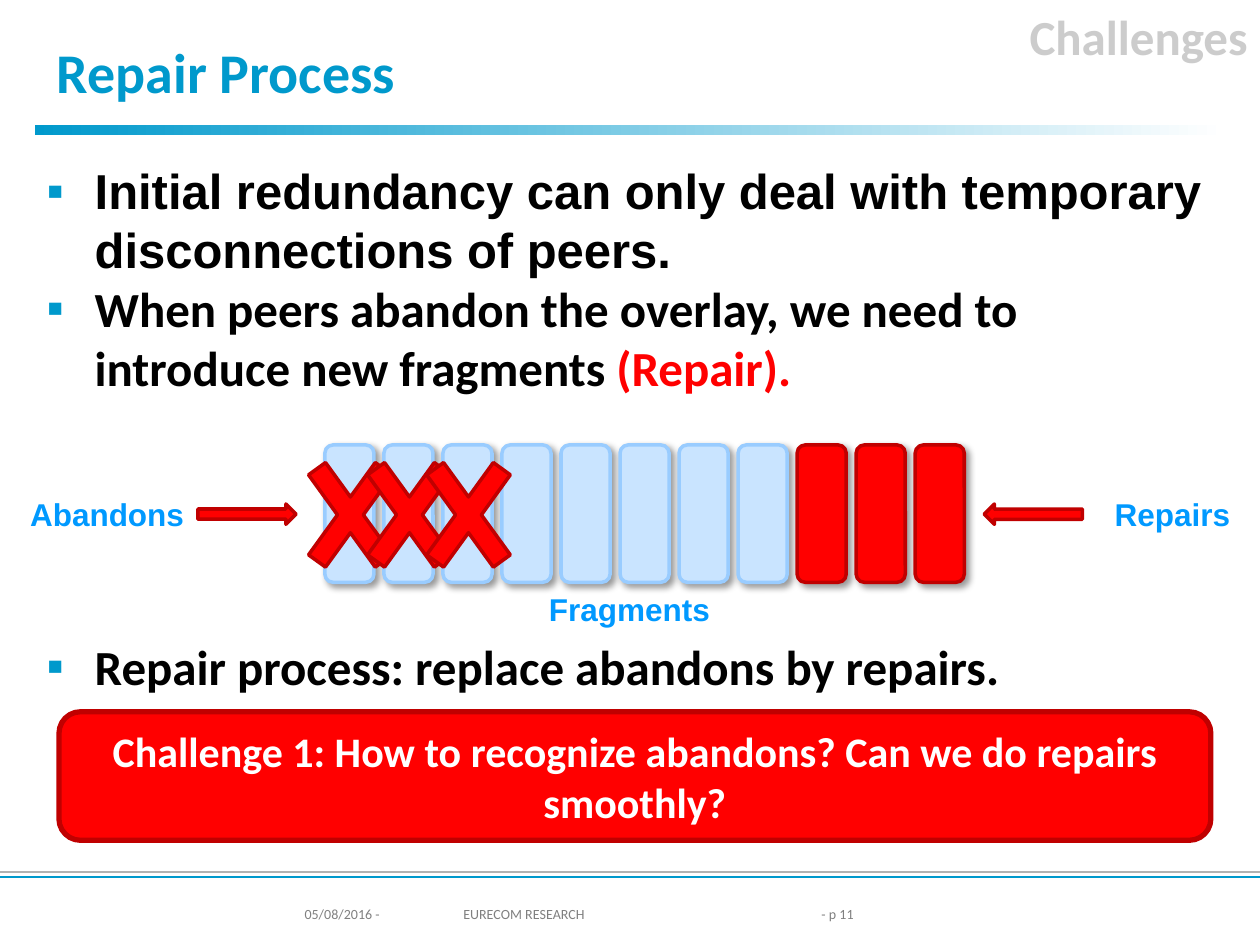
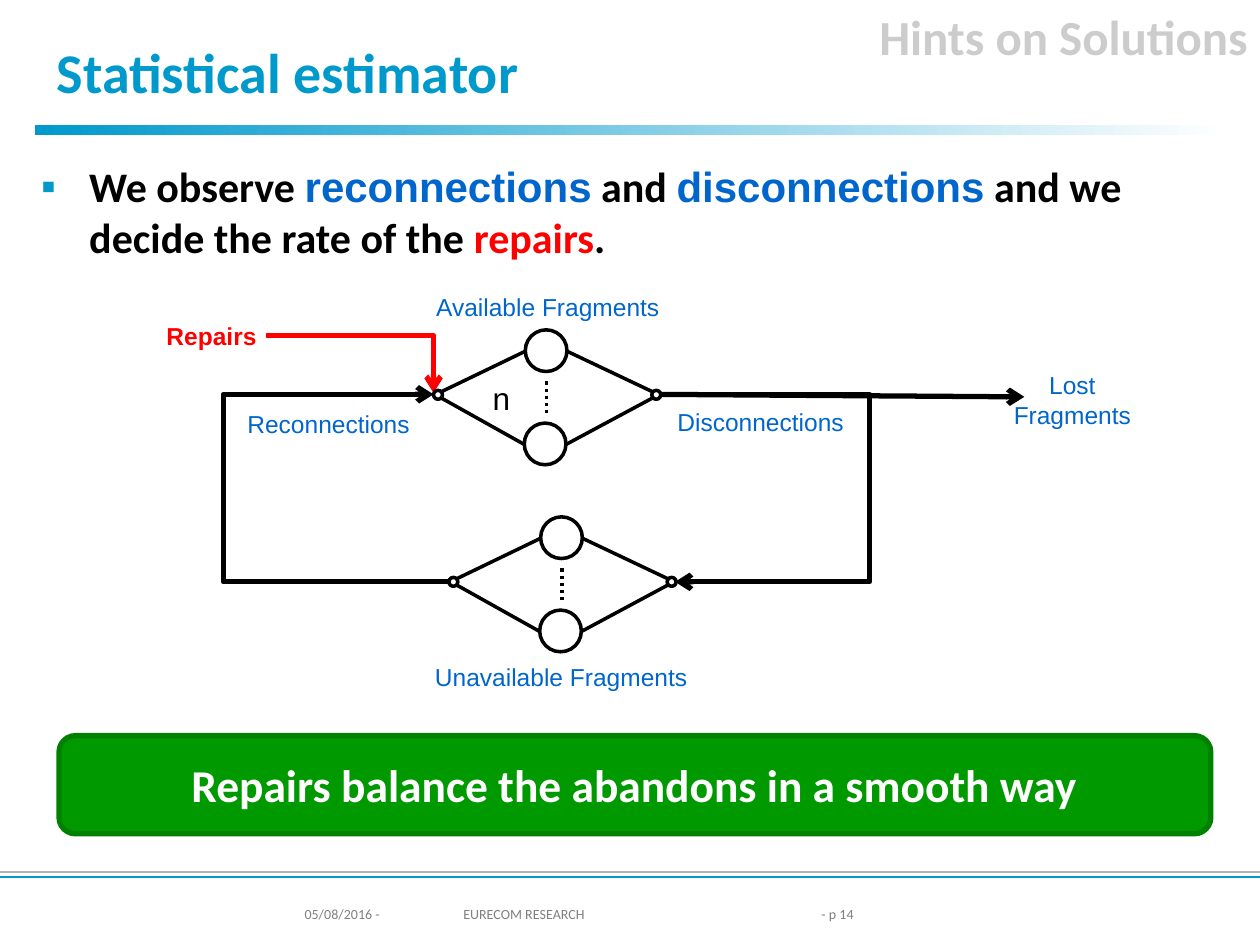
"""Build two slides on repairing fragments in a peer-to-peer overlay."""
from dataclasses import dataclass
from typing import Optional

from lxml import etree
from pptx import Presentation
from pptx import util as u
from pptx.dml.color import RGBColor
from pptx.enum import dml, shapes, text
from pptx.oxml import ns


@dataclass(frozen=True)
class Theme:
    heading_font: str = "Calibri"
    label_font: str = "Arial"
    accent: str = "0099CC"
    black: str = "000000"
    white: str = "FFFFFF"
    rule_grey: str = "B2B2B2"
    section_grey: str = "CCCCCC"
    footer_grey: str = "808080"
    red: str = "FF0000"
    dark_red: str = "C00000"
    green: str = "009900"
    dark_green: str = "008000"
    sky: str = "0099FF"
    sea: str = "0066CC"
    pale_blue: str = "C9E4FF"
    light_blue: str = "99CCFF"
    title_size: int = 32
    body_size: int = 28
    answer_size: int = 26
    compact_size: int = 24
    label_size: int = 18
    node_size: int = 14
    footer_size: int = 8


THEME = Theme()
SHAPE = shapes.MSO_SHAPE
LEFT, CENTER, RIGHT = text.PP_ALIGN.LEFT, text.PP_ALIGN.CENTER, text.PP_ALIGN.RIGHT


@dataclass(frozen=True)
class Box:
    left: float
    top: float
    width: float
    height: float

    def emu(self) -> list:
        return [u.Cm(v) for v in (self.left, self.top, self.width, self.height)]

    def shifted(self, dx: float, dy: float = 0) -> "Box":
        return Box(self.left + dx, self.top + dy, self.width, self.height)


@dataclass(frozen=True)
class Run:
    words: str
    size: int
    color: str = THEME.black
    font: str = THEME.heading_font
    bold: bool = True


@dataclass(frozen=True)
class Para:
    runs: tuple
    align: text.PP_ALIGN = LEFT
    bullet: bool = False
    before: float = 0


@dataclass(frozen=True)
class Look:
    fill: Optional[str]
    line: str
    weight: float = 2


@dataclass(frozen=True)
class Link:
    start: tuple
    end: tuple
    color: str = THEME.black
    weight: float = 2
    via_x: Optional[float] = None
    arrow: str = ""
    dotted: bool = False


RED_LOOK = Look(THEME.red, THEME.dark_red)
BLUE_LOOK = Look(THEME.pale_blue, THEME.light_blue)
NODE_LOOK = Look(None, THEME.black)


def rgb(color: str) -> RGBColor:
    return RGBColor.from_string(color)


def add_element(parent, tag: str, **attributes):
    return etree.SubElement(parent, ns.qn(tag), attributes)


def add_bullet(paragraph) -> None:
    properties = paragraph._p.get_or_add_pPr()
    properties.set("marL", str(u.Cm(0.97)))
    properties.set("indent", str(-u.Cm(0.97)))
    add_element(add_element(properties, "a:buClr"), "a:srgbClr", val=THEME.accent)
    add_element(properties, "a:buFont", typeface=THEME.label_font)
    add_element(properties, "a:buChar", char="▪")


def write(frame, paras: list) -> None:
    for index, para in enumerate(paras):
        paragraph = frame.add_paragraph() if index else frame.paragraphs[0]
        paragraph.alignment = para.align
        if para.bullet:
            add_bullet(paragraph)
        if para.before:
            paragraph.space_before = u.Pt(para.before)
        for part in para.runs:
            run = paragraph.add_run()
            run.text = part.words
            run.font.size = u.Pt(part.size)
            run.font.name = part.font
            run.font.bold = part.bold
            run.font.color.rgb = rgb(part.color)


def add_text(slide, box: Box, paras: list, wrap: bool = True):
    holder = slide.shapes.add_textbox(*box.emu())
    holder.text_frame.word_wrap = wrap
    write(holder.text_frame, paras)
    return holder


def add_label(slide, box: Box, *lines: str, size: int = THEME.node_size,
              color: str = THEME.sea, bold: bool = False, fill: str = "") -> None:
    paras = [Para((Run(line, size, color, THEME.label_font, bold),), CENTER) for line in lines]
    label = add_text(slide, box, paras, wrap=False)
    if fill:
        label.fill.solid()
        label.fill.fore_color.rgb = rgb(fill)


def add_figure(slide, kind: shapes.MSO_SHAPE, box: Box, look: Look):
    figure = slide.shapes.add_shape(kind, *box.emu())
    figure.shadow.inherit = False
    if look.fill:
        figure.fill.solid()
        figure.fill.fore_color.rgb = rgb(look.fill)
    else:
        figure.fill.background()
    figure.line.color.rgb = rgb(look.line)
    figure.line.width = u.Pt(look.weight)
    return figure


def add_shadow(figure) -> None:
    effects = figure._element.spPr.find(ns.qn("a:effectLst"))
    shadow = add_element(effects, "a:outerShdw", blurRad=str(u.Pt(4)), dist=str(u.Pt(3)),
                         dir="2700000", algn="tl", rotWithShape="0")
    color = add_element(shadow, "a:srgbClr", val=THEME.black)
    add_element(color, "a:alpha", val="40000")


def add_link(slide, link: Link) -> None:
    bent = link.via_x is not None
    kind = shapes.MSO_CONNECTOR.ELBOW if bent else shapes.MSO_CONNECTOR.STRAIGHT
    connector = slide.shapes.add_connector(kind, *[u.Cm(v) for v in link.start + link.end])
    connector.line.color.rgb = rgb(link.color)
    connector.line.width = u.Pt(link.weight)
    if link.dotted:
        connector.line.dash_style = dml.MSO_LINE.ROUND_DOT
    properties = connector._element.spPr
    if bent:
        ratio = (link.via_x - link.start[0]) / (link.end[0] - link.start[0])
        geometry = properties.find(ns.qn("a:prstGeom"))
        guides = geometry.find(ns.qn("a:avLst"))
        if guides is None:
            guides = add_element(geometry, "a:avLst")
        add_element(guides, "a:gd", name="adj1", fmla=f"val {round(ratio * 100000)}")
    if link.arrow:
        add_element(properties.find(ns.qn("a:ln")), f"a:{link.arrow}End", type="arrow")
    add_element(properties, "a:effectLst")


def add_callout(slide, box: Box, look: Look, words: str, size: int) -> None:
    callout = add_figure(slide, SHAPE.ROUNDED_RECTANGLE, box, look)
    callout.text_frame.word_wrap = True
    callout.text_frame.vertical_anchor = text.MSO_ANCHOR.MIDDLE
    write(callout.text_frame, [Para((Run(words, size, THEME.white),), CENTER)])


def add_base_slide(deck, heading: str, section: str, page: int):
    slide = deck.slides.add_slide(deck.slide_layouts.get_by_name("Title Only"))
    title = slide.shapes.title
    title.left, title.top, title.width, title.height = Box(0.89, 0.53, 23.8, 1.8).emu()
    title.text_frame.auto_size = text.MSO_AUTO_SIZE.NONE
    title.text_frame.vertical_anchor = text.MSO_ANCHOR.MIDDLE
    write(title.text_frame, [Para((Run(heading, THEME.title_size, THEME.accent),))])

    band = add_figure(slide, SHAPE.RECTANGLE, Box(0.7, 2.53, 24, 0.2),
                      Look(THEME.accent, THEME.accent))
    band.line.fill.background()
    band.fill.gradient()
    band.fill.gradient_angle = 0
    for stop, color, position in zip(band.fill.gradient_stops, (THEME.accent, THEME.white), (0, 1)):
        stop.color.rgb = rgb(color)
        stop.position = position

    for y, color in ((17.58, THEME.rule_grey), (17.68, THEME.accent)):
        add_link(slide, Link((0, y), (25.4, y), color, 1.5))
    add_text(slide, Box(13.89, 0, 11.51, 1.78),
             [Para((Run(section, THEME.body_size, THEME.section_grey),), RIGHT)])
    for left, width, words in ((5.89, 3, "05/08/2016 -"), (9.09, 7.01, "EURECOM RESEARCH"),
                               (16.31, 2.01, f"- p {page}")):
        run = Run(words, THEME.footer_size, THEME.footer_grey, bold=False)
        add_text(slide, Box(left, 18.14, width, 0.56), [Para((run,))])
    return slide


def build_repair_process(deck) -> None:
    slide = add_base_slide(deck, "Repair Process", "Challenges", 11)
    size = THEME.body_size
    add_text(slide, Box(0.69, 3.12, 24, 14.2), [
        Para((Run("Initial redundancy can only deal with temporary disconnections of peers.",
                  size, font=THEME.label_font),), bullet=True),
        Para((Run("When peers abandon the overlay, we need to introduce new fragments ", size),
              Run("(Repair).", size, THEME.red)), bullet=True),
        Para((Run("Repair process: replace abandons by repairs.", size),),
             bullet=True, before=137),
    ])
    for box, words in ((Box(10.8, 11.76, 3.78, 1.02), "Fragments"),
                       (Box(0.33, 9.86, 3.66, 1.02), "Abandons"),
                       (Box(22.2, 9.86, 2.87, 1.02), "Repairs")):
        add_label(slide, box, words, size=THEME.label_size, color=THEME.sky, bold=True)

    pitch, kept, repaired, abandoned = 1.19, 8, 3, 3
    first_fragment = Box(6.55, 8.97, 0.99, 2.77)
    first_cross = Box(5.77, 8.59, 2.59, 3.58)
    for index in range(kept + repaired):
        look = BLUE_LOOK if index < kept else RED_LOOK
        add_shadow(add_figure(slide, SHAPE.ROUNDED_RECTANGLE,
                              first_fragment.shifted(index * pitch), look))
    for index in range(abandoned):
        cross = add_figure(slide, SHAPE.MATH_MULTIPLY, first_cross.shifted(index * pitch), RED_LOOK)
        cross.adjustments[0] = 0.163
    for left, turn in ((3.99, 0), (19.84, 180)):
        arrow = add_figure(slide, SHAPE.RIGHT_ARROW, Box(left, 10.16, 1.98, 0.41), RED_LOOK)
        arrow.rotation = turn
    add_callout(slide, Box(1.19, 14.35, 23.22, 2.59), Look(THEME.red, THEME.dark_red, 3),
                "Challenge 1: How to recognize abandons? Can we do repairs smoothly?",
                THEME.compact_size)


def add_fragment_pool(slide, x: float, y: float) -> None:
    """Draw a diamond of servers whose left joint has its corner at x, y."""
    for box in (Box(1.85, -1.22, 0.84, 0.84), Box(1.83, 0.66, 0.84, 0.84),
                Box(0, 0, 0.18, 0.18), Box(4.4, 0, 0.18, 0.18)):
        add_figure(slide, SHAPE.OVAL, box.shifted(x, y), NODE_LOOK)
    for x1, y1, x2, y2 in ((1.85, -0.79, 0.15, 0.03), (1.83, 1.09, 0.15, 0.15),
                           (2.69, -0.79, 4.42, 0.03), (2.67, 1.09, 4.42, 0.15)):
        add_link(slide, Link((x + x1, y + y1), (x + x2, y + y2)))
    add_link(slide, Link((x + 2.28, y - 0.18), (x + 2.28, y + 0.48), dotted=True))


def build_statistical_estimator(deck) -> None:
    slide = add_base_slide(deck, "Statistical estimator", "Hints on Solutions", 14)
    size = THEME.compact_size
    add_text(slide, Box(0.58, 3.12, 24.21, 5.21), [Para((
        Run("We observe ", size),
        Run("reconnections", size, THEME.sea, THEME.label_font),
        Run(" and ", size),
        Run("disconnections", size, THEME.sea, THEME.label_font),
        Run(" and we decide the rate of the ", size),
        Run("repairs", size, THEME.red),
        Run(".", size)), bullet=True)])

    add_label(slide, Box(2.97, 6.35, 2.59, 0.86), "Repairs", color=THEME.red, bold=True)
    add_label(slide, Box(19.84, 7.34, 3.56, 1.45), "Lost", "Fragments", fill=THEME.white)
    add_label(slide, Box(8.53, 5.77, 5.03, 0.86), "Available Fragments")
    add_label(slide, Box(8.43, 13.23, 5.77, 0.86), "Unavailable Fragments", fill=THEME.white)

    for link in (Link((5.36, 6.76), (8.74, 7.92), THEME.red, 3, 8.74, "tail"),
                 Link((13.31, 7.95), (13.61, 11.73), weight=3, via_x=17.53, arrow="tail"),
                 Link((8.74, 7.95), (9.04, 11.73), weight=3, via_x=4.5, arrow="head"),
                 Link((13.31, 7.95), (20.65, 8), weight=3, arrow="tail")):
        add_link(slide, link)
    add_fragment_pool(slide, 8.74, 7.87)
    add_fragment_pool(slide, 9.05, 11.64)

    add_label(slide, Box(9.68, 7.52, 0.74, 0.86), "n", size=THEME.label_size, color=THEME.black)
    add_label(slide, Box(13.39, 8.08, 3.89, 0.86), "Disconnections", fill=THEME.white)
    add_label(slide, Box(4.72, 8.13, 3.81, 0.86), "Reconnections")
    add_callout(slide, Box(1.19, 14.83, 23.22, 1.98), Look(THEME.green, THEME.dark_green, 3),
                "Repairs balance the abandons in a smooth way", THEME.answer_size)


def main() -> None:
    deck = Presentation()
    deck.slide_width, deck.slide_height = u.Cm(25.4), u.Cm(19.05)
    build_repair_process(deck)
    build_statistical_estimator(deck)
    deck.save("out.pptx")


if __name__ == "__main__":
    main()
